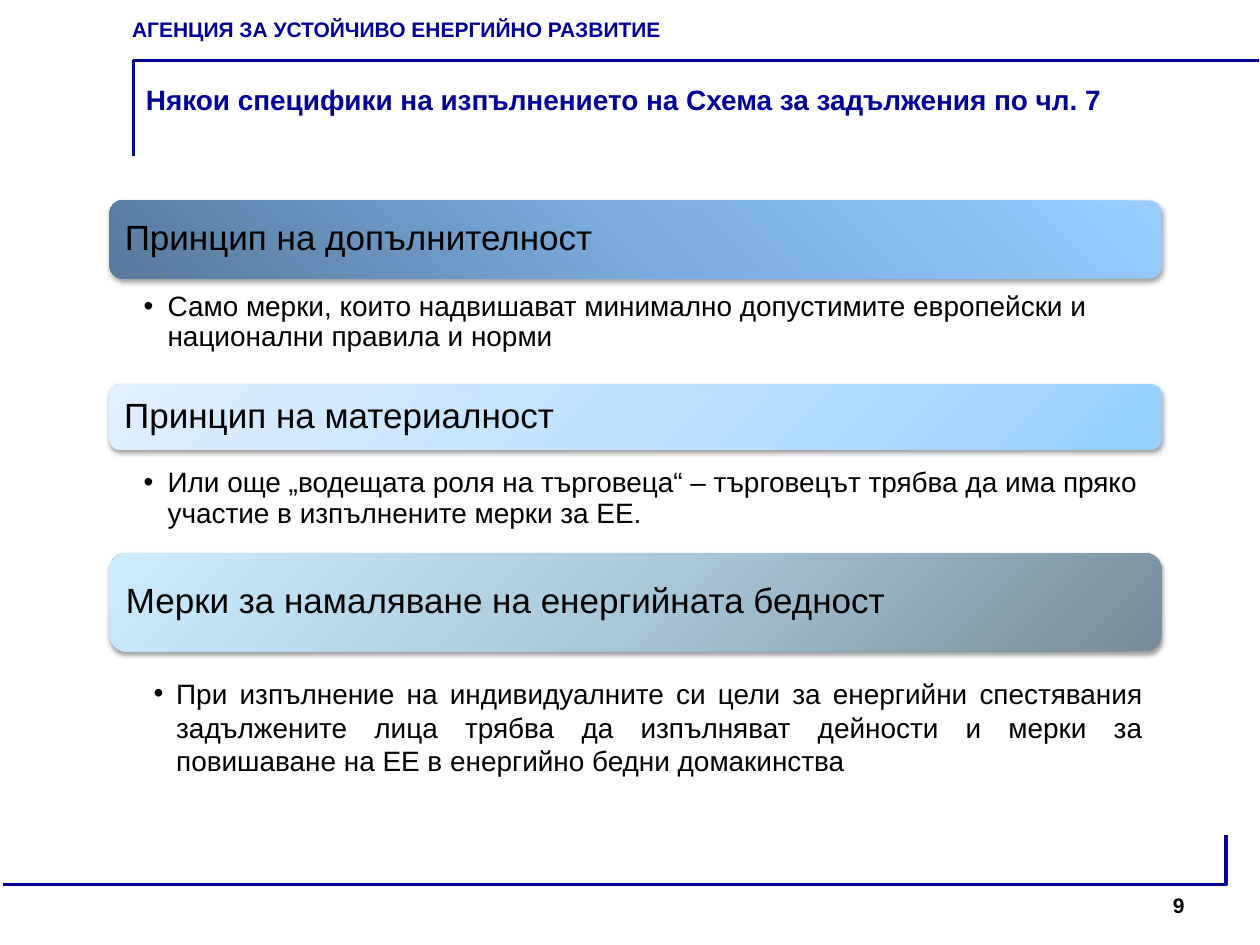
"""Build a slide on three principles of the energy savings obligation scheme."""
from dataclasses import dataclass

from lxml.etree import SubElement
from pptx import Presentation
from pptx.dml.color import RGBColor
from pptx.enum.shapes import MSO_SHAPE
from pptx.enum.text import MSO_ANCHOR, PP_ALIGN
from pptx.oxml.ns import qn
from pptx.util import Inches, Pt


@dataclass(frozen=True)
class Theme:
    font: str = "Arial"
    navy: str = "000099"
    ink: str = "000000"
    small: int = 12
    body: int = 16
    head: int = 20
    rule: int = 2


THEME = Theme()
AGENCY = "АГЕНЦИЯ ЗА УСТОЙЧИВО ЕНЕРГИЙНО РАЗВИТИЕ"
TITLE = "Някои специфики на изпълнението на Схема за задължения по чл. 7"
PAGE = "9"

FRAMES = [
    [(10.6, 12.4), (10.6, 4.8), (99.9, 4.8)],
    [(97.3, 66.3), (97.3, 70.2), (0.2, 70.2)],
]
LABELS = [
    (AGENCY, (9.5, 0.8, 82.7, 3), THEME.small, THEME.navy, PP_ALIGN.LEFT, MSO_ANCHOR.TOP),
    (TITLE, (10.6, 6.1, 82.7, 3.7), THEME.body, THEME.navy, PP_ALIGN.LEFT, MSO_ANCHOR.TOP),
    (PAGE, (71.7, 68.3, 23.3, 5), THEME.small, THEME.ink, PP_ALIGN.RIGHT, MSO_ANCHOR.BOTTOM),
]
BAR_LEFT, BAR_WIDE = 8.7, 83.5
BARS = [
    ("Принцип на допълнителност", 15.9, 6.2, ("56799C", "7BACDD", "99CCFF"), True),
    ("Принцип на материалност", 30.5, 5.2, ("96D0FF", "BFE1FF", "E0EFFF"), False),
    ("Мерки за намаляване на енергийната бедност", 43.9, 7.8,
     ("778C99", "A9C8DA", "CCECFF"), False),
]
TIGHT = dict(pad=(2.7, 0.2, 1.2, 0.2), dent=1.9, hang=1.9, gap=0.9, align=PP_ALIGN.LEFT)
LOOSE = dict(pad=(1, 0.5, 1, 0.5), dent=3.8, hang=1.8, gap=1.0, align=PP_ALIGN.JUSTIFY)
NOTES = [
    ("Само мерки, които надвишават минимално допустимите европейски и национални правила и норми",
     (8.7, 23, 83.5, 7.8), TIGHT),
    ("Или още „водещата роля на търговеца“ – търговецът трябва да има пряко участие "
     "в изпълнените мерки за ЕЕ.", (8.7, 37, 83.5, 7.1), TIGHT),
    ("При изпълнение на индивидуалните си цели за енергийни спестявания задължените лица "
     "трябва да изпълняват дейности и мерки за повишаване на ЕЕ в енергийно бедни домакинства",
     (9.2, 53.2, 82.5, 9.1), LOOSE),
]

deck = Presentation()
deck.slide_width, deck.slide_height = Inches(10), Inches(7.5)
slide = deck.slides.add_slide(deck.slide_layouts[6])
CELL = deck.slide_width / 100


def grid(*cells):
    return [round(cell * CELL) for cell in cells]


def add(parent, tag, **attrs):
    return SubElement(parent, qn(tag), {key: str(val) for key, val in attrs.items()})


def write(shape, text, size, color, align=PP_ALIGN.LEFT, bold=False,
          anchor=MSO_ANCHOR.TOP, pad=(1, 0.5, 1, 0.5)):
    frame = shape.text_frame
    frame.word_wrap = True
    frame.vertical_anchor = anchor
    (frame.margin_left, frame.margin_top,
     frame.margin_right, frame.margin_bottom) = grid(*pad)
    para = frame.paragraphs[0]
    para.text, para.alignment = text, align
    font = para.font
    font.name, font.size, font.bold = THEME.font, Pt(size), bold
    font.color.rgb = RGBColor.from_string(color)
    return para


def draw_frame(points):
    start, *rest = [grid(*point) for point in points]
    path = slide.shapes.build_freeform(*start)
    path.add_line_segments(rest, close=False)
    shape = path.convert_to_shape()
    shape.shadow.inherit = False
    shape.fill.background()
    shape.line.color.rgb = RGBColor.from_string(THEME.navy)
    shape.line.width = Pt(THEME.rule)


def shade(shape, colors, radial):
    props = shape._element.spPr
    blend = add(props, "a:gradFill", rotWithShape=1)
    props.find(qn("a:prstGeom")).addnext(blend)
    stops = add(blend, "a:gsLst")
    for step, color in enumerate(colors):
        add(add(stops, "a:gs", pos=step * 50000), "a:srgbClr", val=color)
    if radial:
        add(add(blend, "a:path", path="circle"), "a:fillToRect", t=100000, r=100000)
    else:
        add(blend, "a:lin", ang=225 * 60000, scaled=0)
    shape.shadow.inherit = False
    glow = add(props.find(qn("a:effectLst")), "a:outerShdw", blurRad=Pt(3.1),
               dist=Pt(1.6), dir=90 * 60000, rotWithShape=0)
    add(add(glow, "a:srgbClr", val=THEME.ink), "a:alpha", val=38000)


def draw_bar(text, top, tall, colors, radial):
    shape = slide.shapes.add_shape(MSO_SHAPE.ROUNDED_RECTANGLE,
                                   *grid(BAR_LEFT, top, BAR_WIDE, tall))
    shape.line.fill.background()
    shade(shape, colors, radial)
    para = write(shape, text, THEME.head, THEME.ink, anchor=MSO_ANCHOR.MIDDLE,
                 pad=(0.9, 0.8, 0.9, 0.8))
    para.line_spacing = 0.9


def draw_note(text, box, style):
    shape = slide.shapes.add_textbox(*grid(*box))
    props = shape.text_frame.paragraphs[0]._p.get_or_add_pPr()
    left, hang = grid(style["dent"], style["hang"])
    props.set("marL", str(left))
    props.set("indent", str(-hang))
    add(props, "a:buFont", typeface=THEME.font)
    add(props, "a:buChar", char="•")
    para = write(shape, text, THEME.body, THEME.ink, style["align"], pad=style["pad"])
    para.line_spacing = style["gap"]


for points in FRAMES:
    draw_frame(points)
for text, box, size, color, align, anchor in LABELS:
    write(slide.shapes.add_textbox(*grid(*box)), text, size, color, align, True, anchor)
for bar in BARS:
    draw_bar(*bar)
for note in NOTES:
    draw_note(*note)

deck.save("out.pptx")
